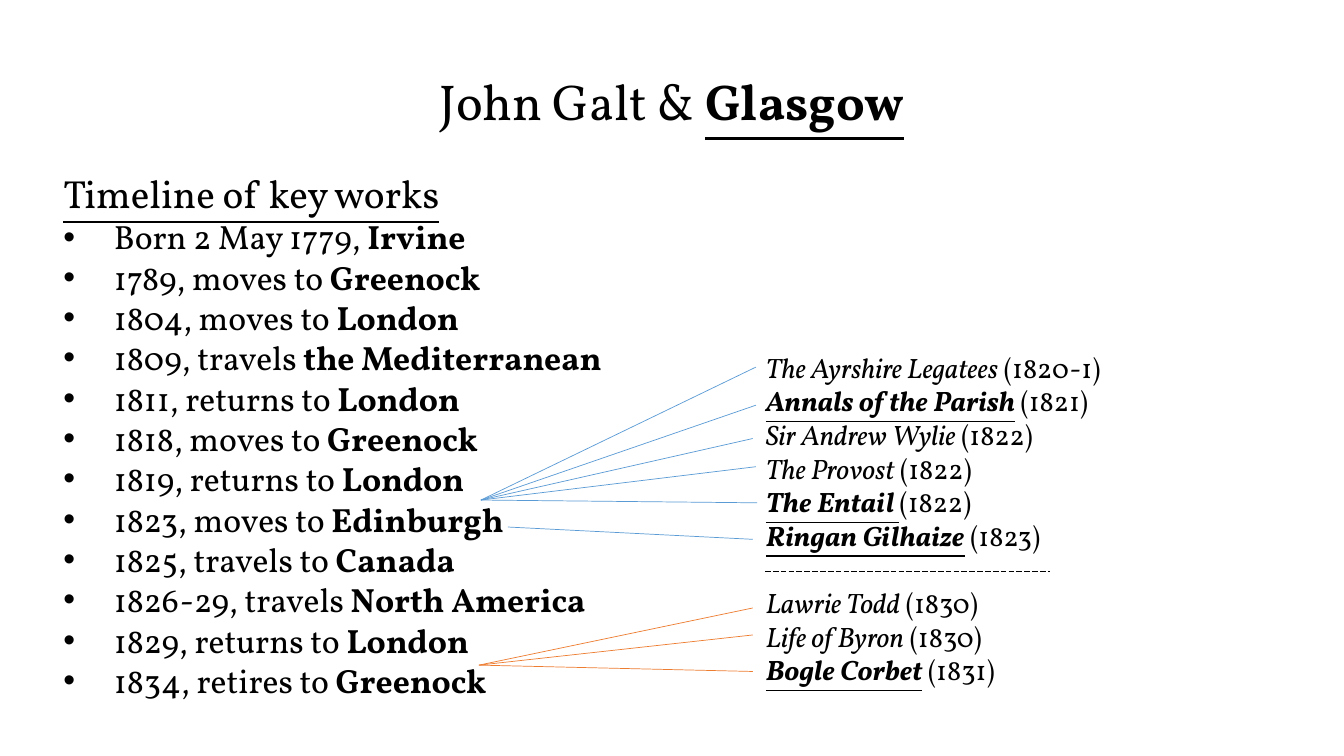
from dataclasses import dataclass

from lxml import etree
from pptx import Presentation
from pptx.dml.color import RGBColor
from pptx.enum import dml, shapes, text
from pptx.oxml import ns
from pptx.util import Cm, Pt


@dataclass(frozen=True)
class Theme:
    font: str = "Vollkorn"
    ink: str = "000000"
    london_1819: str = "5B9BD5"
    london_1829: str = "ED7D31"
    title: int = 36
    heading: int = 28
    event: int = 24
    work: int = 20
    rule: float = 0.5


THEME = Theme()
STRONG = {"bold": True}
KEY = {"bold": True, "underline": True}

EVENTS = [
    ("Born 2 May 1779, ", "Irvine"),
    ("1789, moves to ", "Greenock"),
    ("1804, moves to ", "London"),
    ("1809, travels ", "the Mediterranean"),
    ("1811, returns to ", "London"),
    ("1818, moves to ", "Greenock"),
    ("1819, returns to ", "London"),
    ("1823, moves to ", "Edinburgh"),
    ("1825, travels to ", "Canada"),
    ("1826-29, travels ", "North America"),
    ("1829, returns to ", "London"),
    ("1834, retires to ", "Greenock"),
]

# Title, year, whether it is a key work
EARLY_WORKS = [
    ("The Ayrshire Legatees", " (1820-1)", False),
    ("Annals of the Parish", " (1821)", True),
    ("Sir Andrew Wylie", " (1822)", False),
    ("The Provost", " (1822)", False),
    ("The Entail ", "(1822)", True),
    ("Ringan Gilhaize", " (1823)", True),
]
LATE_WORKS = [
    ("Lawrie Todd", " (1830)", False),
    ("Life of Byron", " (1830)", False),
    ("Bogle Corbet", " (1831)", True),
]

# Colour, starting point by the event, end points by the works (cm)
FANS = [
    (THEME.london_1829, (12.07, 16.76),
     [(18.97, 16.92), (18.97, 16), (18.97, 15.32)]),
    (THEME.london_1819, (12.8, 13.28), [(18.97, 13.59)]),
    (THEME.london_1819, (12.12, 12.6),
     [(19.08, 12.67), (19.05, 11.76), (18.97, 11.05), (19.05, 10.21),
      (19.05, 9.25)]),
]


def add_text_frame(slide, left, top, width, height):
    box = slide.shapes.add_textbox(Cm(left), Cm(top), Cm(width), Cm(height))
    frame = box.text_frame
    frame.word_wrap = True
    frame.auto_size = text.MSO_AUTO_SIZE.SHAPE_TO_FIT_TEXT
    return frame


def write_runs(paragraph, size, *runs):
    """Add (wording, format values) pairs to a paragraph."""
    for wording, values in runs:
        run = paragraph.add_run()
        run.text = wording
        run.font.color.rgb = RGBColor.from_string(THEME.ink)
        for name, value in {"name": THEME.font, "size": Pt(size), **values}.items():
            setattr(run.font, name, value)


def add_bullet(paragraph):
    properties = paragraph._p.get_or_add_pPr()
    properties.set("marL", str(Cm(1.27)))
    properties.set("indent", str(-Cm(1.27)))
    etree.SubElement(properties, ns.qn("a:buFont"), typeface="Arial")
    etree.SubElement(properties, ns.qn("a:buChar"), char="•")


def add_line(slide, start, end, colour, dash=None):
    line = slide.shapes.add_connector(
        shapes.MSO_CONNECTOR.STRAIGHT, *(Cm(length) for length in start + end))
    line.line.color.rgb = RGBColor.from_string(colour)
    line.line.width = Pt(THEME.rule)
    if dash:
        line.line.dash_style = dash
    etree.SubElement(line._element.spPr, ns.qn("a:effectLst"))


def add_title(slide):
    title = add_text_frame(slide, 0, 1.65, 33.87, 1.8).paragraphs[0]
    title.alignment = text.PP_ALIGN.CENTER
    write_runs(title, THEME.title, ("John Galt & ", {}), ("Glasgow", KEY))


def add_timeline(slide):
    frame = add_text_frame(slide, 1.35, 4.14, 28.85, 13.77)
    write_runs(frame.paragraphs[0], THEME.heading,
               ("Timeline of key works", {"underline": True}))
    for event, place in EVENTS:
        paragraph = frame.add_paragraph()
        add_bullet(paragraph)
        write_runs(paragraph, THEME.event, (event, {}), (place, STRONG))


def add_works(slide):
    frame = add_text_frame(slide, 19.05, 8.7, 12.5, 9.59)
    for index, (title, year, is_key) in enumerate(EARLY_WORKS + LATE_WORKS):
        paragraph = frame.add_paragraph() if index else frame.paragraphs[0]
        if index == len(EARLY_WORKS):
            paragraph.space_before = Pt(24)
        style = {"italic": True, **(KEY if is_key else {})}
        write_runs(paragraph, THEME.work, (title, style), (year, {}))


def main():
    presentation = Presentation()
    presentation.slide_width = Cm(33.87)
    presentation.slide_height = Cm(19.05)
    slide = presentation.slides.add_slide(presentation.slide_layouts[6])

    add_title(slide)
    add_timeline(slide)
    add_works(slide)
    for colour, event, works in FANS:
        for work in works:
            add_line(slide, work, event, colour)
    add_line(slide, (19.28, 14.4), (26.47, 14.4), THEME.ink,
             dml.MSO_LINE.LONG_DASH)

    presentation.save("out.pptx")


if __name__ == "__main__":
    main()
